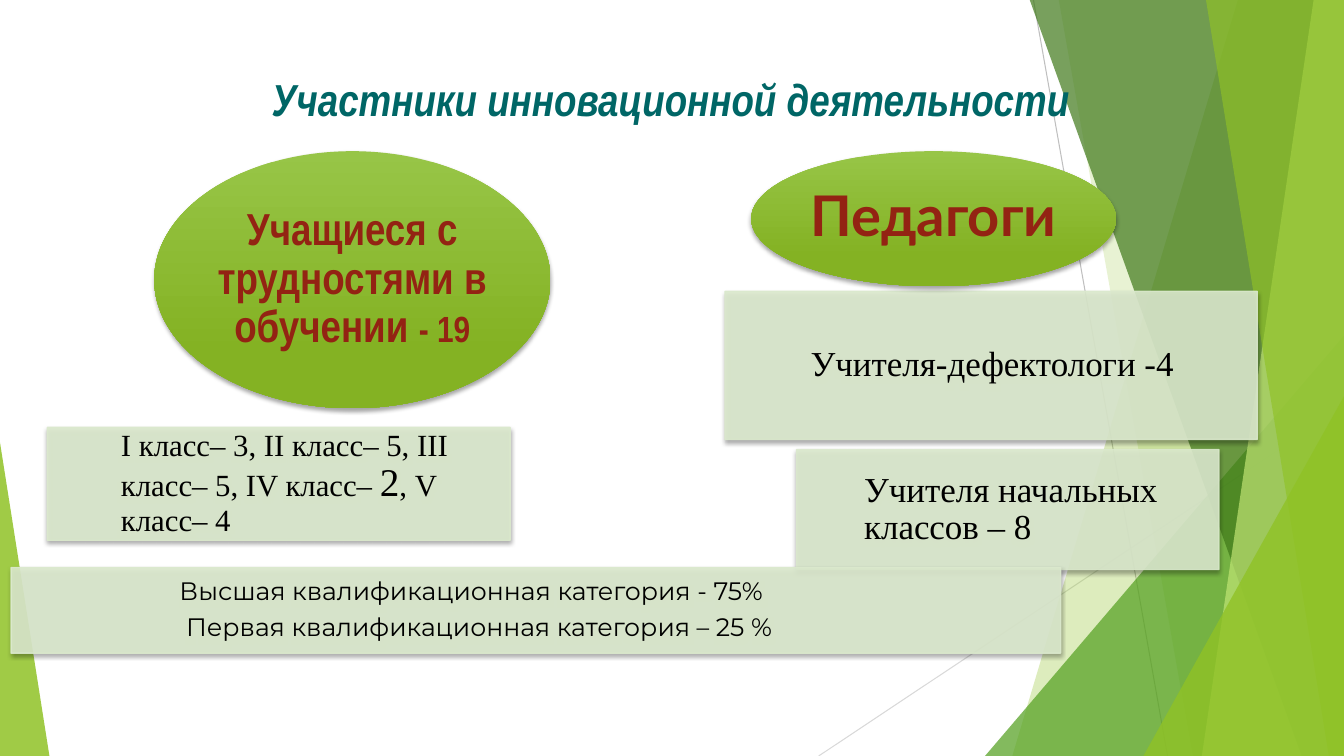
from lxml import etree
from pptx import Presentation, util as u
from pptx.dml.color import RGBColor
from pptx.enum import shapes, text
from pptx.oxml.ns import qn

THEME = {
    "green": "90C226", "leaf": "54A021", "dark": "3F7819", "lime": "C0E474",
    "card": "DBE9CD", "top": "97C547", "bottom": "84B223",
    "teal": "006666", "red": "932313", "black": "000000",
    "title": 32, "oval": 32, "count": 26, "teachers": 40,
    "classes": 22, "accent": 28, "staff": 25, "category": 18,
}
NARROW, SERIF = "Arial Narrow", "Times New Roman"


def set_solid(fill, color, opacity):
    fill.solid()
    fill.fore_color.rgb = RGBColor.from_string(color)
    srgb = fill._xPr.find(".//" + qn("a:srgbClr"))
    etree.SubElement(srgb, qn("a:alpha"), val=str(opacity * 1000))


def write(frame, paragraphs, margins, spacing, font_values, color, **paragraph_values):
    frame.word_wrap = True
    for side, margin in zip(("left", "top", "right", "bottom"), margins):
        setattr(frame, "margin_" + side, u.Inches(margin))
    for index, runs in enumerate(paragraphs):
        paragraph = frame.paragraphs[0] if index == 0 else frame.add_paragraph()
        paragraph.line_spacing = spacing
        for name, value in paragraph_values.items():
            setattr(paragraph, name, value)
        for words, size in runs:
            run = paragraph.add_run()
            run.text = words
            run.font.color.rgb = RGBColor.from_string(color)
            for name, value in {**font_values, "size": u.Pt(size)}.items():
                setattr(run.font, name, value)


presentation = Presentation()
presentation.slide_width, presentation.slide_height = u.Inches(13.33), u.Inches(7.5)
slide = presentation.slides.add_slide(presentation.slide_layouts[6])

# Thin background lines
for x1, y1, x2, y2, color in (
    (10.25, 0, 11.58, 7.5, "BFBFBF"),
    (13.33, 4.03, 8.12, 7.5, "D9D9D9"),
):
    line = slide.shapes.add_connector(
        shapes.MSO_CONNECTOR.STRAIGHT, *map(u.Inches, (x1, y1, x2, y2)))
    line.line.color.rgb = RGBColor.from_string(color)
    line.line.width = u.Pt(0.75)
    etree.SubElement(line._element.spPr, qn("a:effectLst"))

# Translucent facets: bands (top x, bottom x) reach the right edge, triangles have a box and apex
for kind, geometry, color, opacity in (
    ("band", (12.28, 10.04), "green", 30),
    ("band", (10.5, 11.83), "green", 20),
    ("triangle", (9.77, 3.33, 3.56, 4.17, 1), "leaf", 72),
    ("band", (10.21, 12.91), "dark", 70),
    ("band", (13.03, 11.92), "lime", 70),
    ("band", (11.96, 13.18), "green", 65),
    ("triangle", (11.34, 3.93, 1.99, 3.57, 1), "green", 80),
    ("triangle", (0, 4.39, 0.49, 3.11, 0), "green", 85),
):
    if kind == "band":
        top_x, bottom_x = geometry
        corners = [(u.Inches(x), u.Inches(y)) for x, y in (
            (top_x, -0.01), (13.33, -0.01), (13.33, 7.5), (bottom_x, 7.5))]
        builder = slide.shapes.build_freeform(*corners[0])
        builder.add_line_segments(corners[1:], close=True)
        facet = builder.convert_to_shape()
    else:
        *box, apex = geometry
        facet = slide.shapes.add_shape(
            shapes.MSO_SHAPE.ISOSCELES_TRIANGLE, *map(u.Inches, box))
        facet.adjustments[0] = apex
    set_solid(facet.fill, THEME[color], opacity)
    facet.line.fill.background()
    facet.shadow.inherit = False

# Title
title = slide.shapes.add_textbox(*map(u.Inches, (0.8, 0.66, 11.71, 0.65)))
write(title.text_frame, [[("Участники инновационной деятельности", THEME["title"])]],
      (0.1, 0.05, 0.1, 0.05), 1, {"name": NARROW, "bold": True, "italic": True},
      THEME["teal"], alignment=text.PP_ALIGN.CENTER)

# Cards and ovals: kind, box, left margin, other margins, font, paragraphs
for kind, box, left, margin, font, paragraphs in (
    ("card", (0.47, 4.24, 4.59, 1.12), 0.73, 0.17, SERIF,
     [[("I класс– 3, II класс– 5, III класс– 5, IV класс– ", THEME["classes"]),
       ("2", THEME["accent"]), (", V класс– 4", THEME["classes"])]]),
    ("oval", (1.53, 1.5, 3.93, 2.55), 0, 0, NARROW,
     [[("Учащиеся с трудностями в обучении ", THEME["oval"]), ("- 19", THEME["count"])]]),
    ("card", (7.19, 2.89, 5.28, 1.47), 0.85, 0.19, SERIF,
     [[("Учителя-дефектологи -4", THEME["staff"])]]),
    ("card", (7.9, 4.46, 4.19, 1.19), 0.67, 0.19, SERIF,
     [[("Учителя начальных классов – 8", THEME["staff"])]]),
    ("card", (0.11, 5.63, 10.41, 0.85), 1.67, 0.14, "Montserrat",
     [[("Высшая квалификационная категория - 75%", THEME["category"])],
      [(" Первая квалификационная категория – 25 %", THEME["category"])]]),
    ("oval", (7.45, 1.5, 3.62, 1.34), 0, 0, "Lato",
     [[("Педагоги", THEME["teachers"])]]),
):
    is_oval = kind == "oval"
    preset = shapes.MSO_SHAPE.OVAL if is_oval else shapes.MSO_SHAPE.RECTANGLE
    shape = slide.shapes.add_shape(preset, *map(u.Inches, box))
    if is_oval:
        shape.fill.gradient()
        shape.fill.gradient_angle = 270
        for stop, position, color in zip(shape.fill.gradient_stops, (0, 0.78), ("top", "bottom")):
            stop.position = position
            stop.color.rgb = RGBColor.from_string(THEME[color])
        shape.line.fill.background()
    else:
        set_solid(shape.fill, THEME["card"], 90)
        set_solid(shape.line.fill, THEME["card"], 90)
        shape.line.width = u.Pt(1)

    # Soft shadow straight below
    shape.shadow.inherit = False
    effects = shape._element.spPr.find(qn("a:effectLst"))
    shadow = etree.SubElement(effects, qn("a:outerShdw"), blurRad=str(u.Pt(3)),
                              dist=str(u.Pt(2)), dir="5400000", rotWithShape="0")
    shade = etree.SubElement(shadow, qn("a:srgbClr"), val=THEME["black"])
    etree.SubElement(shade, qn("a:alpha"), val="35000")

    shape.text_frame.vertical_anchor = text.MSO_ANCHOR.MIDDLE
    write(shape.text_frame, paragraphs, (left, margin, margin, margin), 0.9,
          {"name": font, "bold": is_oval}, THEME["red" if is_oval else "black"],
          alignment=text.PP_ALIGN.CENTER if is_oval else text.PP_ALIGN.LEFT,
          space_after=u.Pt(round(paragraphs[0][0][1] * 0.35, 1)))

presentation.save("out.pptx")
